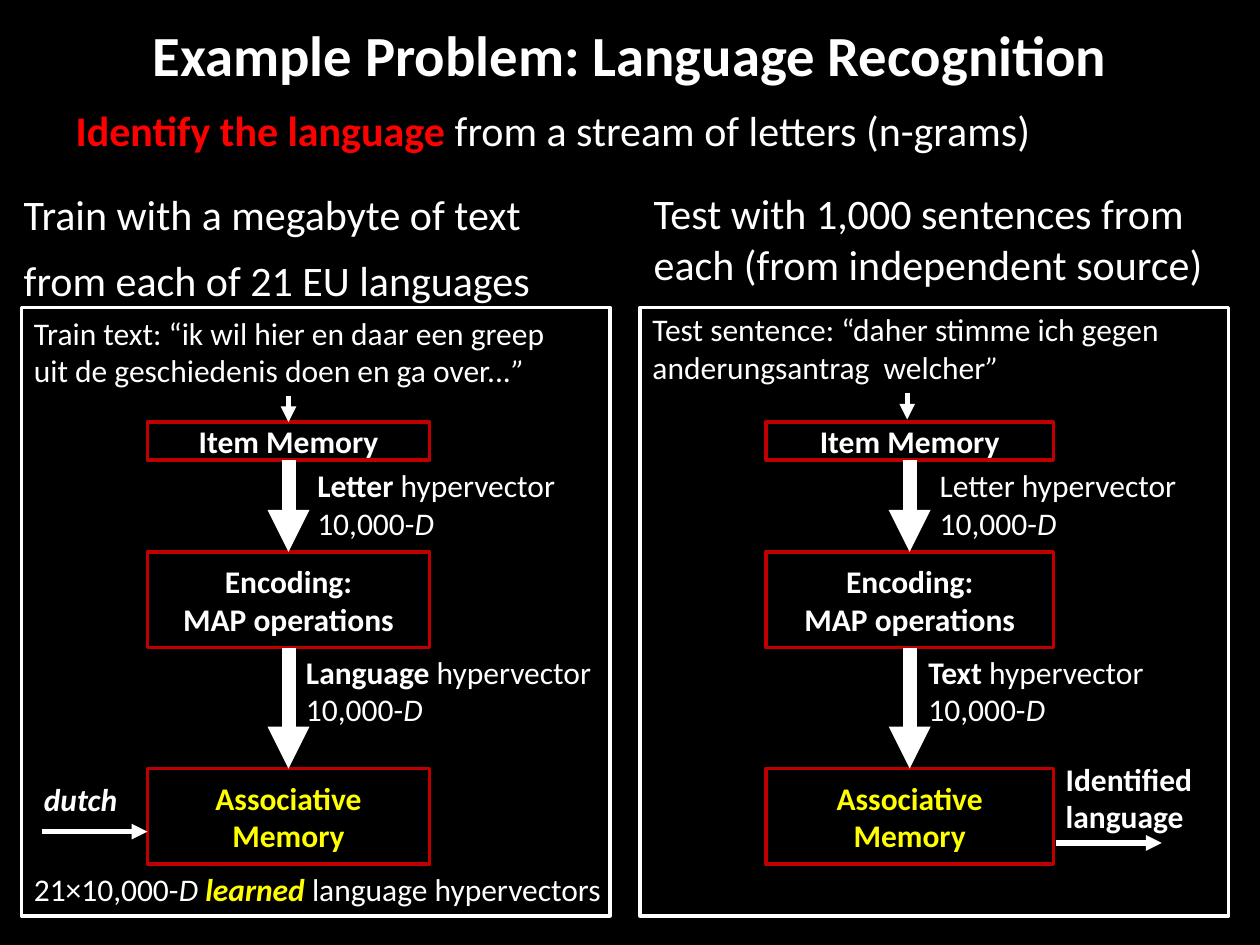
import pptx
import pptx.util
import pptx.dml.color
import pptx.enum.shapes
import pptx.enum.text
import pptx.oxml
from lxml import etree
from pptx.util import Inches

RGBColor = pptx.dml.color.RGBColor
BLACK = RGBColor(0x00, 0x00, 0x00)
WHITE = RGBColor(0xFF, 0xFF, 0xFF)
RED = RGBColor(0xFF, 0x00, 0x00)
DARK_RED = RGBColor(0xC0, 0x00, 0x00)
YELLOW = RGBColor(0xFF, 0xFF, 0x00)
ALIGN = pptx.enum.text.PP_ALIGN
ANCHOR = pptx.enum.text.MSO_ANCHOR
RECTANGLE = pptx.enum.shapes.MSO_SHAPE.RECTANGLE

presentation = pptx.Presentation()
presentation.slide_width = Inches(10)
presentation.slide_height = Inches(7.5)
slide = presentation.slides.add_slide(presentation.slide_layouts[1])
slide.background.fill.solid()
slide.background.fill.fore_color.rgb = BLACK


def write_text(shape, paragraphs, size=18, align=ALIGN.LEFT, anchor=ANCHOR.TOP, spacing=None):
    """Fill a shape; each paragraph is a list of (text, style letters b/i, colour) runs."""
    frame = shape.text_frame
    frame.word_wrap = True
    frame.auto_size = pptx.enum.text.MSO_AUTO_SIZE.NONE
    frame.vertical_anchor = anchor
    for index, runs in enumerate(paragraphs):
        paragraph = frame.add_paragraph() if index else frame.paragraphs[0]
        paragraph.alignment = align
        if spacing:
            paragraph.line_spacing = spacing
        for text, style, color in runs:
            run = paragraph.add_run()
            run.text = text
            run.font.name = "Calibri"
            run.font.size = pptx.util.Pt(size)
            run.font.bold = "b" in style
            run.font.italic = "i" in style
            run.font.color.rgb = color


def add_arrow(start, end, width):
    arrow = slide.shapes.add_connector(
        pptx.enum.shapes.MSO_CONNECTOR.STRAIGHT, *(Inches(value) for value in start + end))
    arrow.line.color.rgb = WHITE
    arrow.line.width = pptx.util.Pt(width)
    head = etree.SubElement(arrow.line._get_or_add_ln(), pptx.oxml.ns.qn("a:tailEnd"))
    head.set("type", "triangle")
    etree.SubElement(arrow._element.spPr, pptx.oxml.ns.qn("a:effectLst"))
    return arrow


# Title and subtitle
title, body = slide.shapes.title, slide.placeholders[1]
for placeholder, top, height in ((title, 0.08, 0.7), (body, 0.7, 0.59)):
    placeholder.left, placeholder.top = Inches(0.5), Inches(top)
    placeholder.width, placeholder.height = Inches(9), Inches(height)
write_text(title, [[("Example Problem: Language Recognition", "b", WHITE)]],
           32.4, ALIGN.CENTER, ANCHOR.MIDDLE)
write_text(body, [[("Identify the language ", "b", RED),
                   ("from a stream of letters (n-grams)", "", WHITE)]], 24, spacing=1.2)
properties = body.text_frame.paragraphs[0]._p.get_or_add_pPr()
properties.set("marL", "0")
properties.set("indent", "0")
etree.SubElement(properties, pptx.oxml.ns.qn("a:buNone"))

# Text labels: position, paragraphs, size, line spacing
dimension = [("10,000-", "", WHITE), ("D", "i", WHITE)]
labels = [
    ((0.09, 1.33, 4.74, 1.15),
     [[("Train with a megabyte of text from each of 21 EU languages", "", WHITE)]], 24, 1.3),
    ((5.09, 1.44, 4.66, 0.91),
     [[("Test with 1,000 sentences from each (from independent source)", "", WHITE)]], 24, None),
    ((0.17, 2.44, 4.58, 0.71),
     [[("Train text: “ik wil hier en daar een greep uit de geschiedenis doen en ga over...",
        "", WHITE), ("”", "i", WHITE)]], 18, None),
    ((5.08, 2.41, 4.58, 0.71),
     [[("Test sentence: “daher stimme ich gegen anderungsantrag  welcher", "", WHITE),
       ("”", "i", WHITE)]], 18, None),
    ((2.42, 3.65, 2.17, 0.71),
     [[("Letter", "b", WHITE), (" hypervector", "", WHITE)], dimension], 18, None),
    ((7.36, 3.65, 2.21, 0.71), [[("Letter hypervector", "", WHITE)], dimension], 18, None),
    ((2.33, 5.13, 2.51, 0.71),
     [[("Language", "b", WHITE), (" hypervector", "", WHITE)], dimension], 18, None),
    ((7.27, 5.13, 2.55, 0.71),
     [[("Text", "b", WHITE), (" hypervector", "", WHITE)], dimension], 18, None),
    ((0.25, 6.14, 1, 0.4), [[("dutch", "bi", WHITE)]], 18, None),
    ((8.36, 5.98, 1.3, 0.71), [[("Identified language", "b", WHITE)]], 18, None),
    ((0.17, 6.86, 4.75, 0.4),
     [[("21×10,000-", "", WHITE), ("D ", "i", WHITE), ("learned", "bi", YELLOW),
       (" language hypervectors", "", WHITE)]], 18, None),
]
for position, paragraphs, size, spacing in labels:
    label = slide.shapes.add_textbox(*(Inches(value) for value in position))
    write_text(label, paragraphs, size, spacing=spacing)

# Train and test panels: a frame around three stages joined by arrows
stages = [
    (3.35, 0.3, ["Item Memory"], WHITE),
    (4.38, 0.76, ["Encoding:", "MAP operations"], WHITE),
    (6.1, 0.76, ["Associative Memory"], YELLOW),
]
for frame_left, stage_left, stage_width in ((0.17, 1.17, 2.24), (5.08, 6.08, 2.28)):
    center = stage_left + stage_width / 2
    boxes = [(stage_left, top, stage_width, height, lines, color, DARK_RED)
             for top, height, lines, color in stages]
    boxes.append((frame_left, 2.44, 4.67, 4.83, [], WHITE, WHITE))
    previous = None
    for left, top, width, height, lines, color, outline in boxes:
        box = slide.shapes.add_shape(
            RECTANGLE, Inches(left), Inches(top), Inches(width), Inches(height))
        box.shadow.inherit = False
        box.fill.background()
        box.line.color.rgb = outline
        box.line.width = pptx.util.Pt(2)
        write_text(box, [[(line, "b", color)] for line in lines],
                   align=ALIGN.CENTER, anchor=ANCHOR.MIDDLE)
        if previous and lines:
            arrow = add_arrow((center, 4), (center, top), 8)
            arrow.begin_connect(previous, 2)
            arrow.end_connect(box, 0)
        previous = box

# Input and output arrows
for start, end in (
    ((2.29, 3.14), (2.29, 3.35)),
    ((7.2, 3.12), (7.2, 3.33)),
    ((0.33, 6.6), (1.17, 6.6)),
    ((8.38, 6.69), (9.22, 6.69)),
):
    add_arrow(start, end, 3)

presentation.save("out.pptx")
